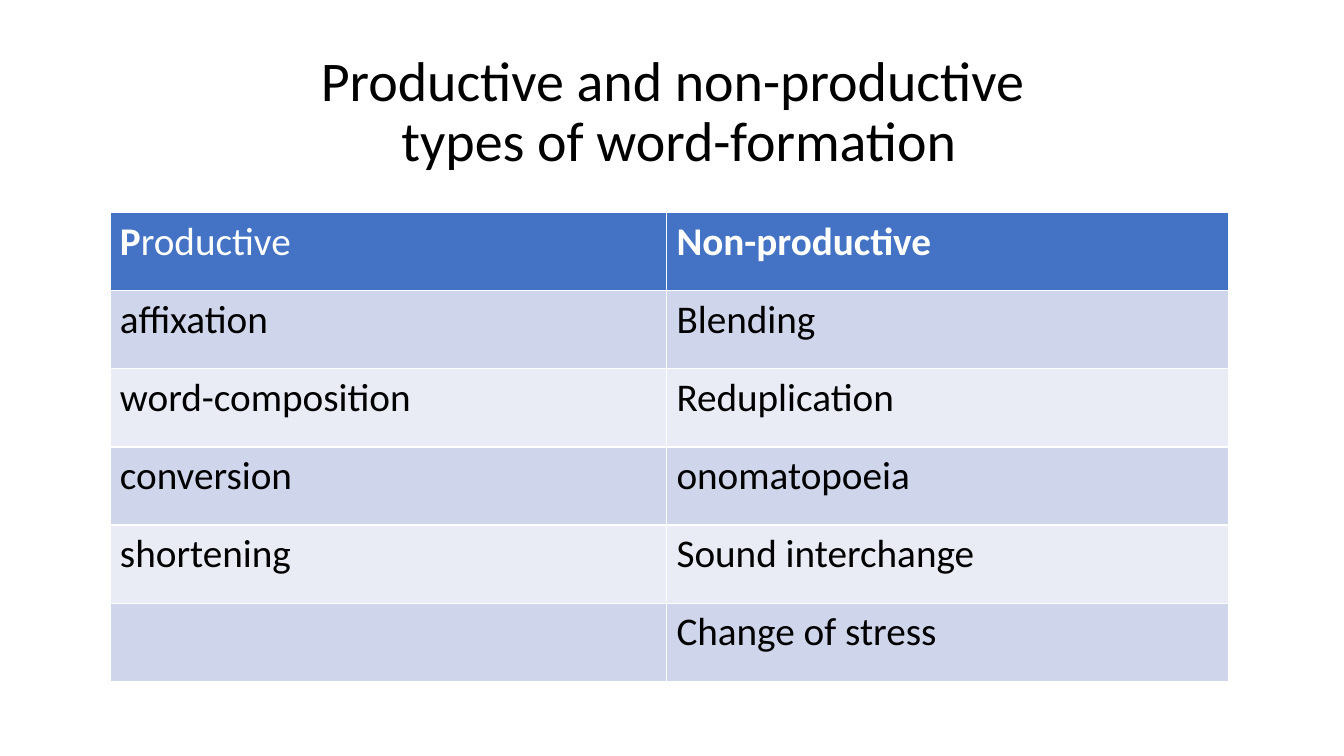
"""Build a slide that tables productive and non-productive word-formation types."""
from pptx import Presentation
from pptx.dml.color import RGBColor as RGB
from pptx.enum.text import MSO_ANCHOR as ANCHOR, PP_ALIGN as ALIGN
from pptx.util import Inches, Pt

COLORS = {
    "text": "000000",
    "header_text": "FFFFFF",
    "header": "4472C4",
    "odd_row": "CFD5EA",
    "even_row": "E9EBF5",
}
FONT = "Calibri"
WORD_FORMATION = [
    (["P", "roductive"], ["Non-productive"]),
    (["affixation"], ["Blending"]),
    (["word-composition"], ["Reduplication"]),
    (["conversion"], ["onomatopoeia"]),
    (["shortening"], ["Sound interchange"]),
    ([], ["Change of stress"]),
]


def style_run(run, size, color, bold=False):
    run.font.name = FONT
    run.font.size = Pt(size)
    run.font.bold = bold
    run.font.color.rgb = RGB.from_string(COLORS[color])


prs = Presentation()
prs.slide_width, prs.slide_height = Inches(13.33), Inches(7.5)
slide = prs.slides.add_slide(prs.slide_layouts[6])

title = slide.shapes.add_textbox(Inches(0.92), Inches(0.4), Inches(11.5), Inches(1.45))
title.text_frame.word_wrap = True
title.text_frame.vertical_anchor = ANCHOR.MIDDLE
heading = title.text_frame.paragraphs[0]
heading.text = "Productive and non-productive\v types of word-formation"
heading.alignment = ALIGN.CENTER
heading.line_spacing = 0.9
for run in heading.runs:
    style_run(run, 40, "text")

types_table = slide.shapes.add_table(
    len(WORD_FORMATION), 2, Inches(1.09), Inches(2.11), Inches(11.1), Inches(4.65)
).table
types_table.columns[0].width = Inches(5.52)
types_table.columns[1].width = Inches(5.58)

for row, entries in enumerate(WORD_FORMATION):
    is_header = row == 0
    fill = "header" if is_header else "odd_row" if row % 2 else "even_row"
    for column, parts in enumerate(entries):
        cell = types_table.cell(row, column)
        cell.fill.solid()
        cell.fill.fore_color.rgb = RGB.from_string(COLORS[fill])
        for part in parts:
            run = cell.text_frame.paragraphs[0].add_run()
            run.text = part
            color = "header_text" if is_header else "text"
            style_run(run, 28, color, bold=is_header and part != "roductive")

prs.save("out.pptx")
